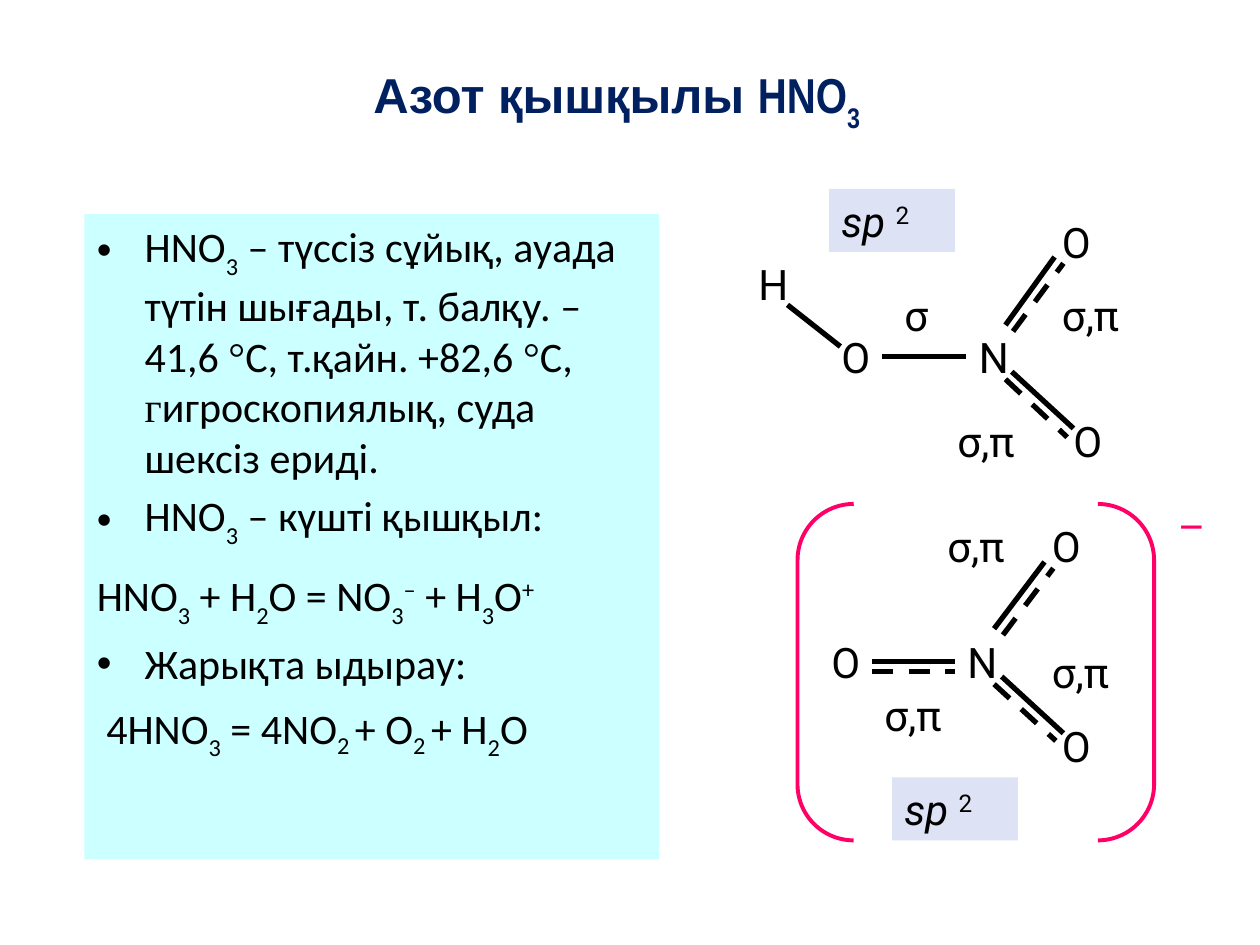
from pptx import Presentation
from pptx.util import Inches, Pt
from pptx.dml.color import RGBColor as RGB
from pptx.enum.dml import MSO_LINE as Dash
from pptx.enum.shapes import MSO_CONNECTOR as Conn, MSO_SHAPE as Shape
from pptx.enum.text import MSO_ANCHOR as Anchor, MSO_AUTO_SIZE as Fit, PP_ALIGN as Align
from lxml import etree
from pptx.oxml.ns import qn

INK = {k: RGB.from_string(v) for k, v in {
    "title": "002060", "text": "000000", "panel": "CCFFFF",
    "tag": "DDE2F5", "ion": "FF0066"}.items()}
BASE = {"_": "-30000", "~": "-25000", "^": "30000"}


def write(para, text, size, face, color, bold=None):
    """Runs are split by |; a leading _ or ~ lowers, ^ raises, * is Times, @ is Narrow, / is italic."""
    for part in text.split("|"):
        mark = part[0] if part[0] in "_~^*@/" else ""
        run = para.add_run()
        run.text = part[len(mark):]
        font = run.font
        font.size, font.bold = Pt(size), bold
        font.name = {"*": "Times New Roman", "@": "Arial Narrow"}.get(mark, face)
        font.color.rgb = INK[color]
        if mark == "/":
            font.italic = True
        if mark in BASE:
            run._r.get_or_add_rPr().set("baseline", BASE[mark])


def label(home, text, x, y, w, color="text", fill=None):
    box = home.add_textbox(Inches(x), Inches(y), Inches(w), Inches(0.5))
    if fill:
        box.fill.solid()
        box.fill.fore_color.rgb = INK[fill]
    frame = box.text_frame
    frame.word_wrap, frame.auto_size = True, Fit.SHAPE_TO_FIT_TEXT
    write(frame.paragraphs[0], text, 24, "Roboto", color)


deck = Presentation()
deck.slide_width, deck.slide_height = Inches(10), Inches(7.5)
slide = deck.slides.add_slide(deck.slide_layouts[5])
shapes = slide.shapes

# Title
title = shapes.title
title.left, title.top = Inches(0.67), Inches(0.33)
title.width, title.height = Inches(8.5), Inches(0.92)
title.text_frame.vertical_anchor = Anchor.MIDDLE
head = title.text_frame.paragraphs[0]
head.alignment = Align.CENTER
write(head, "Азот қышқылы |@HNO", 28, "Arial", "title", True)
write(head, "_3 ", 28, "Arial Narrow", "title", True)

# Facts panel: bullet, line spacing, text
facts = [
    (True, None, "HNO|_3| – түссіз сұйық, ауада түтін шығады, т. балқу. –41,6 |*°|С, т.қайн. +82,6 "
                 "|*°|С, |*г|игроскопиялық, суда шексіз ериді."),
    (True, None, "HNO|_3| – күшті қышқыл:"),
    (False, 1.2, "HNO|_3| + H|_2|O = NO|_3|^–| + H|_3|O|^+"),
    (True, None, "Жарықта ыдырау:"),
    (False, 1.1, " 4HNO|_3| = 4NO|~2 |+ O|~2 |+ H|_2|O"),
]
panel = shapes.add_textbox(Inches(0.67), Inches(1.7), Inches(4.56), Inches(5.12))
panel.fill.solid()
panel.fill.fore_color.rgb = INK["panel"]
frame = panel.text_frame
frame.word_wrap, frame.auto_size = True, Fit.NONE
for i, (dot, gap, text) in enumerate(facts):
    para = frame.add_paragraph() if i else frame.paragraphs[0]
    props = para._p.get_or_add_pPr()
    props.set("marL", str(Inches(0.38)))
    props.set("indent", str(-Inches(0.38)))
    if dot:
        etree.SubElement(props, qn("a:buFont")).set("typeface", "Arial")
        etree.SubElement(props, qn("a:buChar")).set("char", "•")
    else:
        etree.SubElement(props, qn("a:buNone"))
    if gap:
        para.line_spacing = gap
    if i:
        para.space_before = Pt(4.8)
    write(para, text, 24, "Calibri", "text")

# Structures: labels (text, x, y, width) and bonds (x1, y1, x2, y2, dashed)
ion = (
    [("N", 7.58, 5, 0.58), ("O", 6.5, 5, 0.58), ("O", 8.33, 5.67, 0.58), ("O", 8.25, 4.08, 0.58),
     ("σ,π", 6.92, 5.42, 0.75), ("σ,π", 7.42, 4.08, 0.75), ("σ,π", 8.25, 5.08, 0.75)],
    [(6.92, 5.25, 7.58, 5.25, False), (6.92, 5.33, 7.58, 5.33, True),
     (7.89, 4.99, 8.29, 4.46, False), (7.96, 5.04, 8.36, 4.51, True),
     (7.95, 5.37, 8.44, 5.82, False), (7.89, 5.43, 8.38, 5.88, True)])
acid = (
    [("N", 7.67, 2.58, 0.58), ("O", 6.58, 2.58, 0.58), ("O", 8.42, 3.25, 0.58),
     ("O", 8.33, 1.67, 0.58), ("H", 5.92, 2, 0.58),
     ("σ,π", 8.33, 2.25, 0.75), ("σ,π", 7.5, 3.25, 0.75), ("σ", 7.08, 2.25, 0.58)],
    [(7, 2.83, 7.67, 2.83, False), (6.25, 2.42, 6.67, 2.75, False),
     (7.98, 2.58, 8.37, 2.04, False), (8.04, 2.63, 8.44, 2.09, True),
     (8.03, 2.95, 8.52, 3.4, False), (7.98, 3.01, 8.47, 3.47, True)])

label(shapes, "/sp |^2", 6.58, 1.5, 1, fill="tag")
for marks, bonds in (ion, acid):
    group = shapes.add_group_shape().shapes
    for mark in marks:
        label(group, *mark)
    for x1, y1, x2, y2, dashed in bonds:
        bond = group.add_connector(Conn.STRAIGHT, Inches(x1), Inches(y1), Inches(x2), Inches(y2))
        bond.line.color.rgb, bond.line.width = INK["text"], Pt(3)
        if dashed:
            bond.line.dash_style = Dash.DASH
        etree.SubElement(bond._element.spPr, qn("a:effectLst"))
    if marks is ion[0]:
        # Brackets, charge and hybridisation of the ion
        pair = group.add_shape(Shape.DOUBLE_BRACKET, Inches(6.33), Inches(4), Inches(2.83), Inches(2.67))
        pair.adjustments[0] = 0.167
        pair.shadow.inherit = False
        pair.fill.background()
        pair.line.color.rgb, pair.line.width = INK["ion"], Pt(2.25)
        label(group, "–", 9.25, 3.92, 0.5, "ion")
        label(group, "/sp |^2", 7.08, 6.17, 1, fill="tag")

deck.save("out.pptx")
